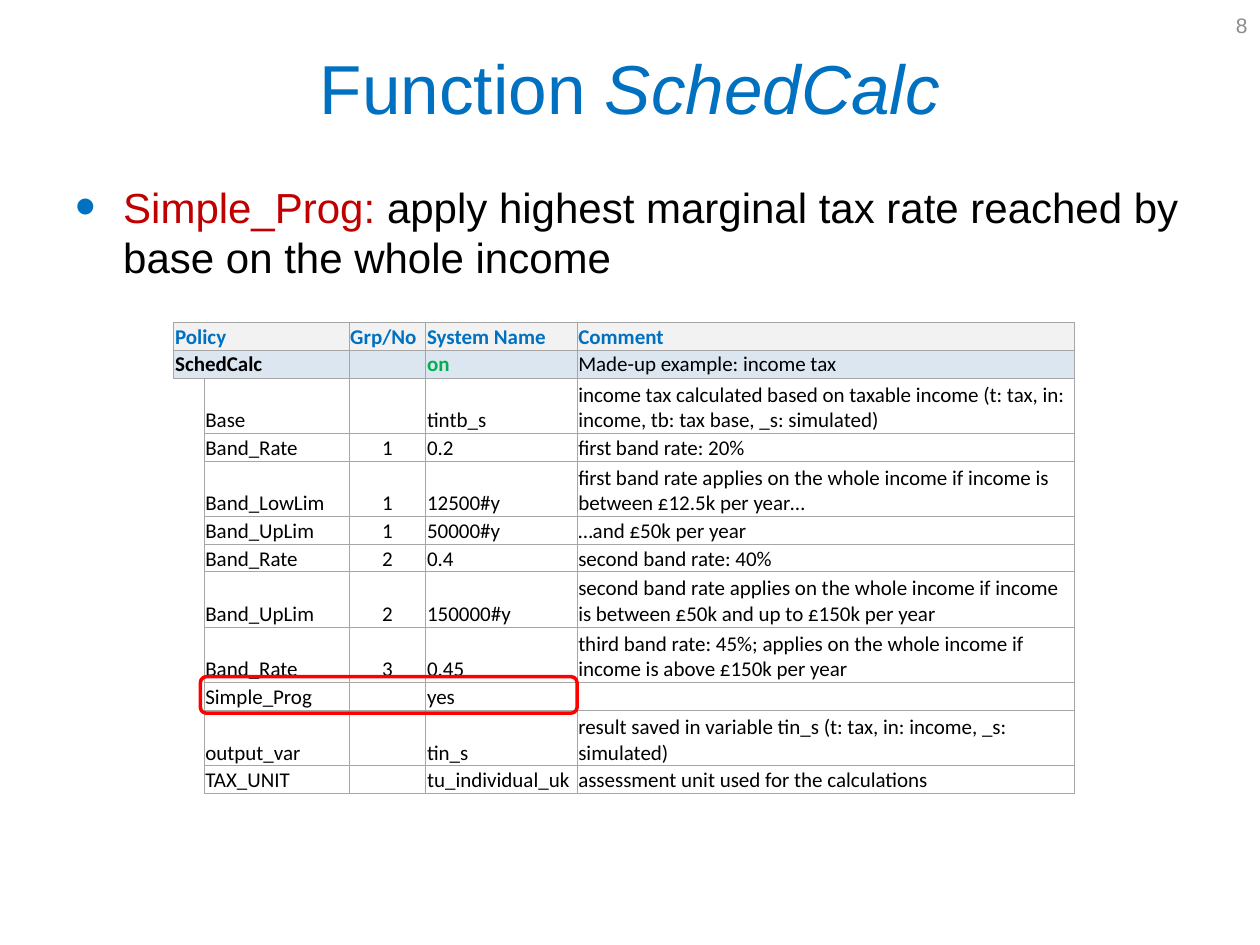
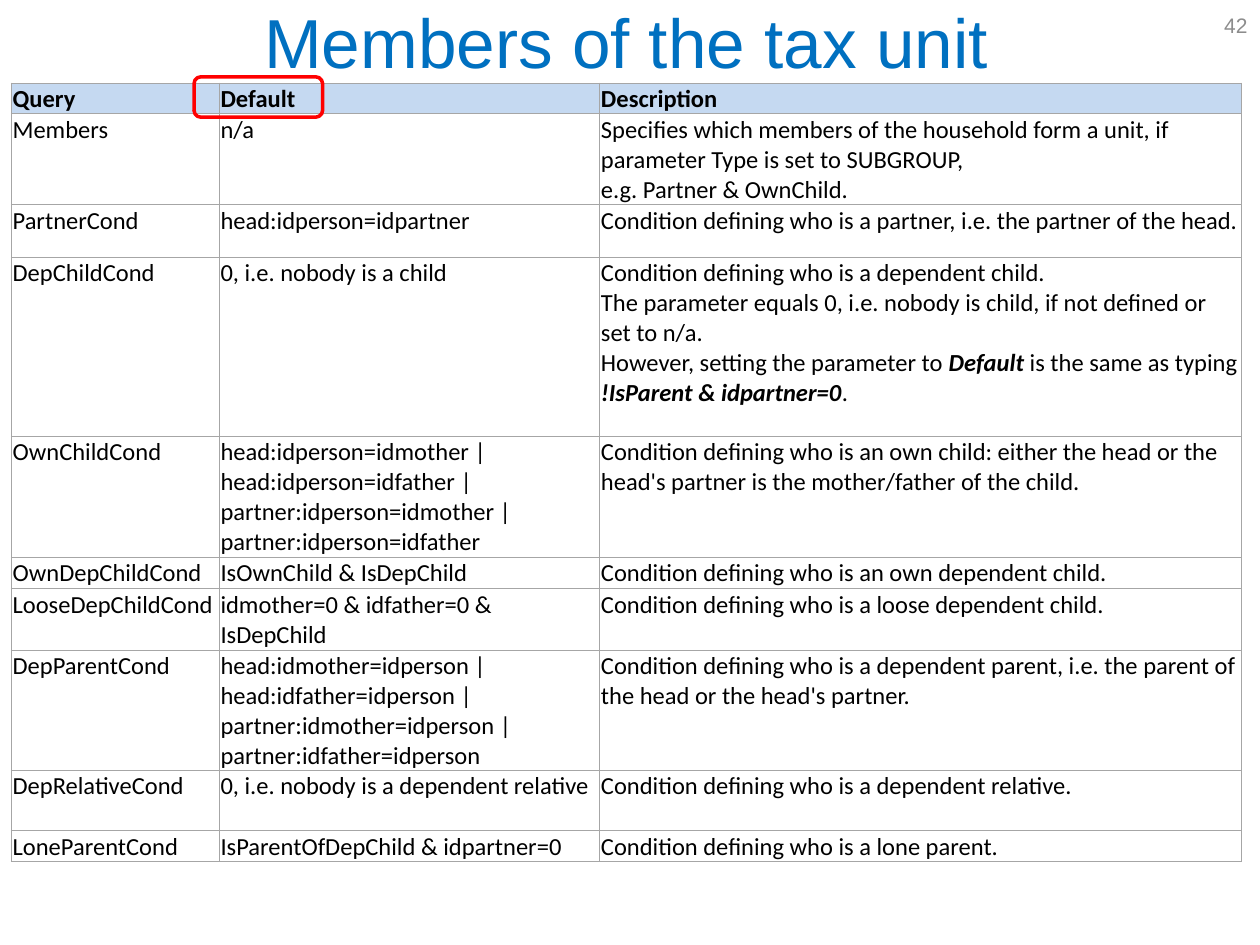
import pptx
import pptx.util
import pptx.dml.color
import pptx.enum.shapes
import pptx.enum.text
import pptx.oxml
import pptx.oxml.ns

RGBColor = pptx.dml.color.RGBColor
BLUE = RGBColor(0x00, 0x70, 0xC0)
DARK_RED = RGBColor(0xC0, 0x00, 0x00)
RED = RGBColor(0xFF, 0x00, 0x00)
GREEN = RGBColor(0x00, 0xB0, 0x50)
BLACK = RGBColor(0x00, 0x00, 0x00)
WHITE = RGBColor(0xFF, 0xFF, 0xFF)
GREY = RGBColor(0x8C, 0x8C, 0x8C)
BORDER = RGBColor(0xA6, 0xA6, 0xA6)
PALE_GREY = RGBColor(0xF2, 0xF2, 0xF2)
PALE_BLUE = RGBColor(0xDC, 0xE6, 0xF1)
HEADER_BLUE = RGBColor(0xC5, 0xD9, 0xF1)

ALIGN = pptx.enum.text.PP_ALIGN
ANCHOR = pptx.enum.text.MSO_ANCHOR
NO_STYLE = "{2D5ABB26-0587-4C30-8999-92F81FD0307C}"
NS = pptx.oxml.ns.nsdecls("a")

prs = pptx.Presentation()
prs.slide_width = pptx.util.Inches(10)
prs.slide_height = pptx.util.Inches(7.5)
COL = prs.slide_width / 100
ROW = prs.slide_height / 75

TITLE = {"name": "Arial", "size": 39.6, "color": BLUE}
NUMBER = {"name": "Arial", "size": 12, "color": GREY}
BODY = {"name": "Arial", "size": 24, "color": BLACK}


def grid(left, top, width, height):
    return int(left * COL), int(top * ROW), int(width * COL), int(height * ROW)


def write(tf, text, fmt, emphasis, align=ALIGN.LEFT):
    for i, line in enumerate(text.split("\n")):
        p = tf.add_paragraph() if i else tf.paragraphs[0]
        p.alignment = align
        for j, part in enumerate(line.split("*")):
            if not part:
                continue
            r = p.add_run()
            r.text = part
            for key, value in {**fmt, **(emphasis if j % 2 else {})}.items():
                if key == "color":
                    r.font.color.rgb = value
                elif key == "size":
                    r.font.size = pptx.util.Pt(value)
                else:
                    setattr(r.font, key, value)
        p._p.get_or_add_endParaRPr().set("sz", str(int(fmt["size"] * 100)))


sched_rows = [
    ["Policy", "", "Grp/No", "System Name", "Comment"],
    ["SchedCalc", "", "", "on", "Made-up example: income tax"],
    ["", "Base", "", "tintb_s", "income tax calculated based on taxable income "
     "(t: tax, in: income, tb: tax base, _s: simulated)"],
    ["", "Band_Rate", "1", "0.2", "first band rate: 20%"],
    ["", "Band_LowLim", "1", "12500#y", "first band rate applies on the whole income "
     "if income is between £12.5k per year…"],
    ["", "Band_UpLim", "1", "50000#y", "…and £50k per year"],
    ["", "Band_Rate", "2", "0.4", "second band rate: 40%"],
    ["", "Band_UpLim", "2", "150000#y", "second band rate applies on the whole income "
     "if income is between £50k and up to £150k per year"],
    ["", "Band_Rate", "3", "0.45", "third band rate: 45%; applies on the whole income "
     "if income is above £150k per year"],
    ["", "Simple_Prog", "", "yes", ""],
    ["", "output_var", "", "tin_s", "result saved in variable tin_s "
     "(t: tax, in: income, _s: simulated)"],
    ["", "TAX_UNIT", "", "tu_individual_uk", "assessment unit used for the calculations"],
]

member_rows = [
    ["Query", "Default", "Description"],
    ["Members", "n/a", "Specifies which members of the household form a unit, if parameter "
     "Type is set to SUBGROUP,\ne.g. Partner & OwnChild."],
    ["PartnerCond", "head:idperson=idpartner",
     "Condition defining who is a partner, i.e. the partner of the head."],
    ["DepChildCond", "0, i.e. nobody is a child",
     "Condition defining who is a dependent child.\n"
     "The parameter equals 0, i.e. nobody is child, if not defined or set to n/a.\n"
     "However, setting the parameter to *Default* is the same as typing "
     "*!IsParent & idpartner=0*."],
    ["OwnChildCond", "head:idperson=idmother | head:idperson=idfather | "
     "partner:idperson=idmother | partner:idperson=idfather",
     "Condition defining who is an own child: either the head or the head's partner "
     "is the mother/father of the child."],
    ["OwnDepChildCond", "IsOwnChild & IsDepChild",
     "Condition defining who is an own dependent child."],
    ["LooseDepChildCond", "idmother=0 & idfather=0 & IsDepChild",
     "Condition defining who is a loose dependent child."],
    ["DepParentCond", "head:idmother=idperson | head:idfather=idperson | "
     "partner:idmother=idperson | partner:idfather=idperson",
     "Condition defining who is a dependent parent, i.e. the parent of the head "
     "or the head's partner."],
    ["DepRelativeCond", "0, i.e. nobody is a dependent relative",
     "Condition defining who is a dependent relative."],
    ["LoneParentCond", "IsParentOfDepChild & idpartner=0",
     "Condition defining who is a lone parent."],
]

slides = [
    {"title": "Function *SchedCalc*", "title_at": (5, 3, 90, 7.7), "number": "8",
     "body": "*Simple_Prog: *apply highest marginal tax rate reached by base "
             "on the whole income",
     "rows": sched_rows, "table_at": (13.8, 25.6), "size": 12, "anchor": ANCHOR.BOTTOM,
     "widths": [2.4, 11.5, 6.1, 12, 39.5],
     "heights": [4.4 if i in (2, 4, 7, 8, 10) else 2.2 for i in range(12)],
     "bands": [PALE_GREY, PALE_BLUE], "indented": True,
     "highlight": (15.9, 53.7, 29.9, 2.9)},
    {"title": "Members of the tax unit", "title_at": (4.7, -0.1, 90, 6.6), "number": "42",
     "body": "",
     "rows": member_rows, "table_at": (0.9, 6.6), "size": 14, "anchor": ANCHOR.TOP,
     "widths": [16.5, 30.2, 50.9],
     "heights": [2.4, 7.2, 4.2, 14.2, 9.6, 2.5, 4.9, 9.5, 4.8, 2.4],
     "bands": [HEADER_BLUE], "indented": False,
     "highlight": (15.4, 6.1, 10.2, 3.2)},
]

for page in slides:
    s = prs.slides.add_slide(prs.slide_layouts[5])
    title = s.shapes.title
    title.left, title.top, title.width, title.height = grid(*page["title_at"])
    tf = title.text_frame
    tf.word_wrap = True
    tf.auto_size = pptx.enum.text.MSO_AUTO_SIZE.NONE
    tf.vertical_anchor = ANCHOR.MIDDLE
    write(tf, page["title"], TITLE, {"italic": True}, ALIGN.CENTER)

    tf = s.shapes.add_textbox(*grid(76.7, 0, 23.3, 4)).text_frame
    tf.word_wrap = True
    tf.vertical_anchor = ANCHOR.MIDDLE
    write(tf, page["number"], NUMBER, {}, ALIGN.RIGHT)

    if page["body"]:
        tf = s.shapes.add_textbox(*grid(5, 13.9, 90, 53.1)).text_frame
        tf.word_wrap = True
        write(tf, page["body"], BODY, {"color": DARK_RED})
        pPr = tf.paragraphs[0]._p.get_or_add_pPr()
        indent = int(3.8 * COL)
        pPr.set("marL", str(indent))
        pPr.set("indent", str(-indent))
        for bullet in (f'<a:buClr {NS}><a:srgbClr val="{BLUE}"/></a:buClr>',
                       f'<a:buSzPct {NS} val="140000"/>',
                       f'<a:buFont {NS} typeface="Arial"/>',
                       f'<a:buChar {NS} char="•"/>'):
            pPr.append(pptx.oxml.parse_xml(bullet))

    rows, widths, heights = page["rows"], page["widths"], page["heights"]
    place = grid(*page["table_at"], sum(widths), sum(heights))
    table = s.shapes.add_table(len(rows), len(widths), *place).table
    table._tbl.tblPr.find(pptx.oxml.ns.qn("a:tableStyleId")).text = NO_STYLE
    table.first_row = table.horz_banding = False
    for column, width in zip(table.columns, widths):
        column.width = int(width * COL)
    for row, height in zip(table.rows, heights):
        row.height = int(height * ROW)

    bands = page["bands"]
    for i, texts in enumerate(rows):
        in_band = i < len(bands)
        for j, text in enumerate(texts):
            cell = table.cell(i, j)
            gutter = page["indented"] and j == 0 and not in_band
            sides = ("R", "T") if gutter and i == len(bands) else ("R",) if gutter else "LRTB"
            tcPr = cell._tc.get_or_add_tcPr()
            for side in "LRTB":
                paint = (f'<a:solidFill><a:srgbClr val="{BORDER}"/></a:solidFill>'
                         if side in sides else "<a:noFill/>")
                tcPr.append(pptx.oxml.parse_xml(
                    f'<a:ln{side} {NS} w="6350">{paint}</a:ln{side}>'))
            cell.fill.solid()
            cell.fill.fore_color.rgb = bands[i] if in_band else WHITE
            cell.margin_left = cell.margin_right = cell.margin_top = int(0.1 * COL)
            cell.margin_bottom = 0
            banded_anchor = ANCHOR.MIDDLE if page["indented"] else ANCHOR.TOP
            cell.vertical_anchor = banded_anchor if in_band else page["anchor"]
            color = BLACK
            if page["indented"] and i == 0:
                color = BLUE
            elif text == "on":
                color = GREEN
            fmt = {"name": "Calibri", "size": page["size"], "color": color,
                   "bold": i == 0 or (in_band and j < 4)}
            centred = page["indented"] and j == 2 and not in_band
            write(cell.text_frame, text, fmt, {"bold": True, "italic": True},
                  ALIGN.CENTER if centred else ALIGN.LEFT)
        if page["indented"] and in_band:
            table.cell(i, 0).merge(table.cell(i, 1))

    sp = s.shapes.add_shape(pptx.enum.shapes.MSO_SHAPE.ROUNDED_RECTANGLE,
                            *grid(*page["highlight"]))
    sp.shadow.inherit = False
    sp.fill.background()
    sp.line.color.rgb = RED
    sp.line.width = pptx.util.Pt(2)

prs.save("out.pptx")
